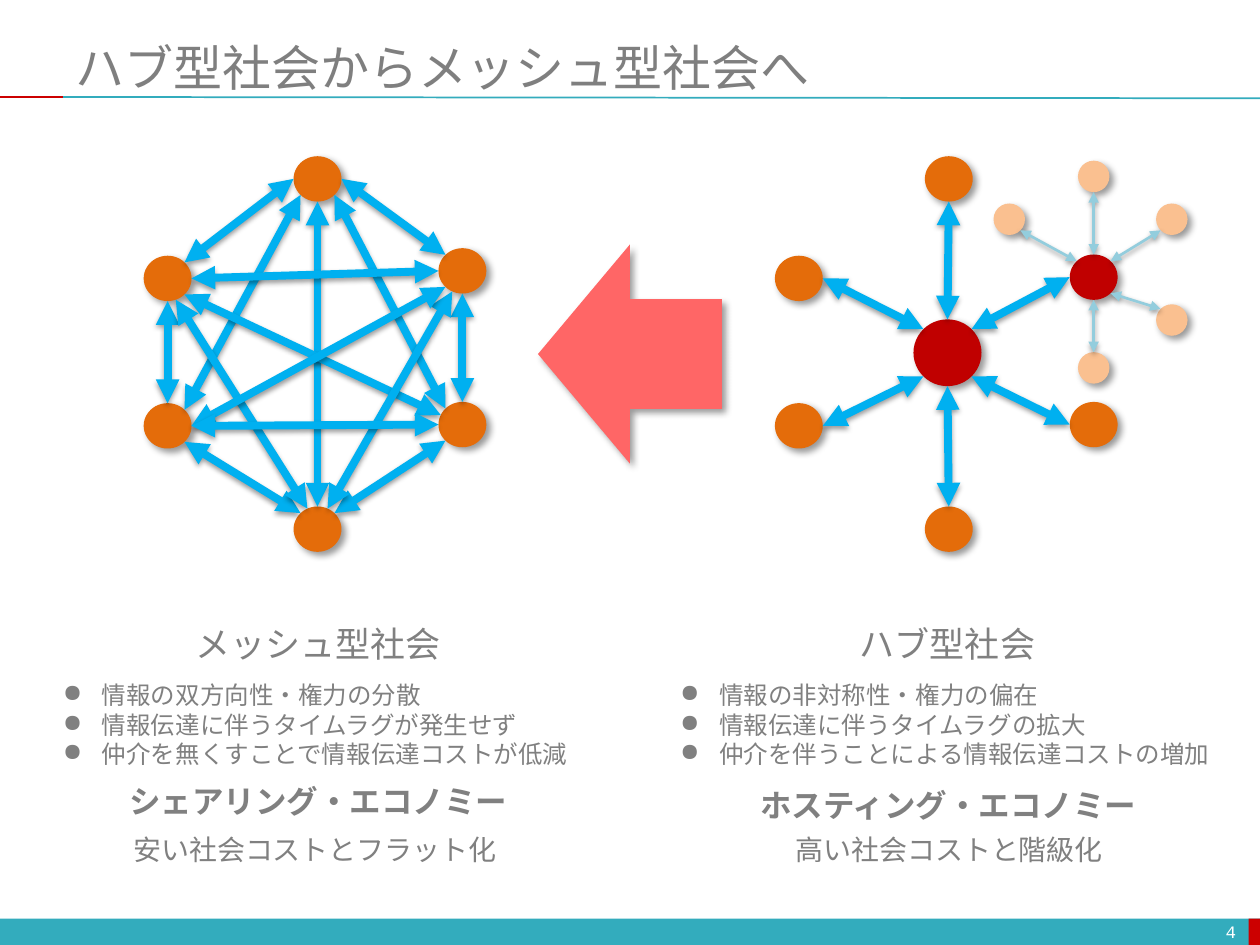
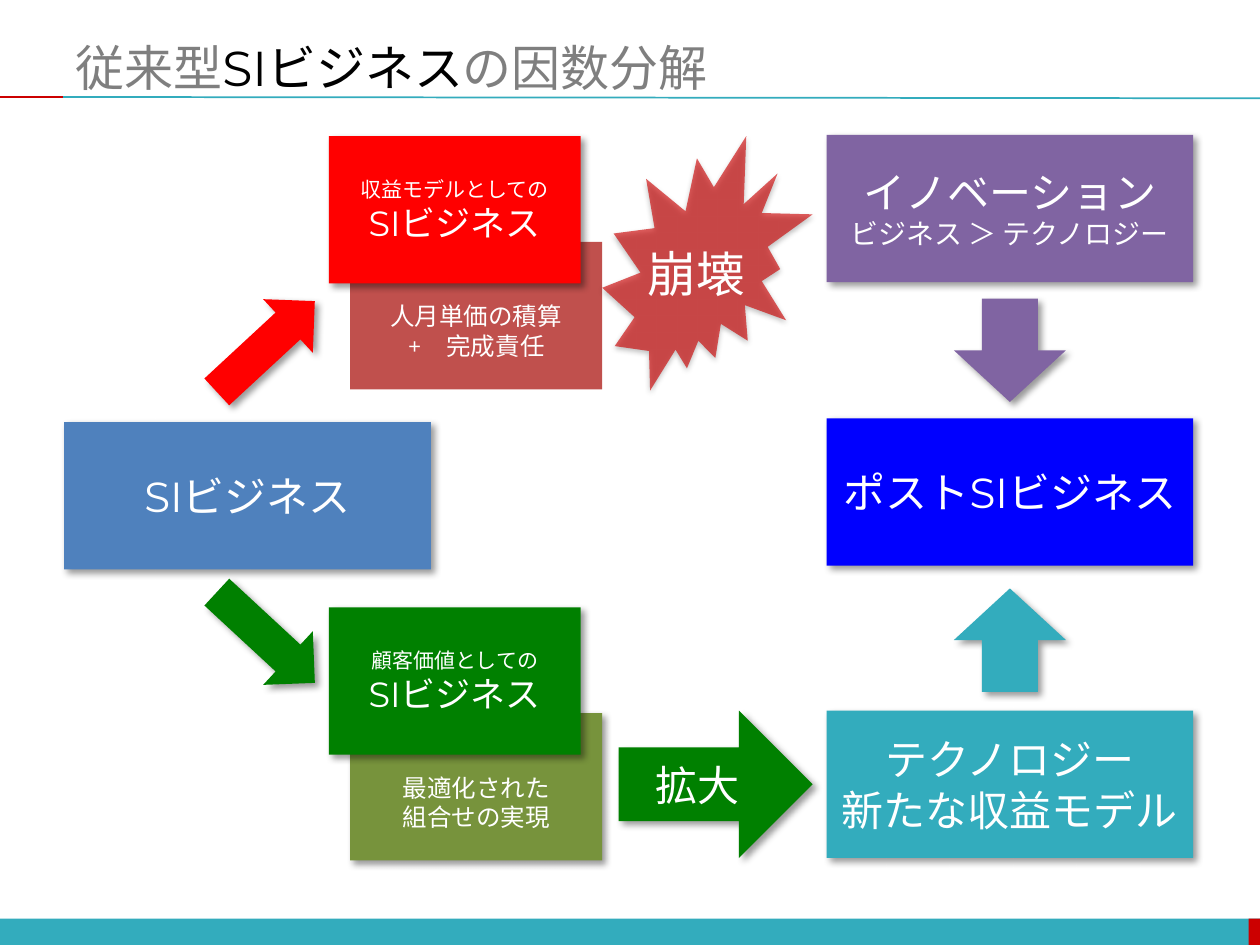
import math

import pptx
import pptx.util
import pptx.dml.color
import pptx.enum.shapes
import pptx.enum.text
import pptx.oxml
import pptx.oxml.ns
from lxml import etree

Inches = pptx.util.Inches
Pt = pptx.util.Pt
RGBColor = pptx.dml.color.RGBColor
Kind = pptx.enum.shapes.MSO_SHAPE
Align = pptx.enum.text.PP_ALIGN
Anchor = pptx.enum.text.MSO_ANCHOR
qn = pptx.oxml.ns.qn

TEAL = RGBColor(0x33, 0xAC, 0xBD)
CRIMSON = RGBColor(0xCC, 0x00, 0x00)
WHITE = RGBColor(0xFF, 0xFF, 0xFF)
BLACK = RGBColor(0x00, 0x00, 0x00)
GRAY = RGBColor(0x7F, 0x7F, 0x7F)
SILVER = RGBColor(0x80, 0x80, 0x80)
ORANGE = RGBColor(0xE4, 0x6C, 0x0A)
PEACH = RGBColor(0xFA, 0xC0, 0x90)
MAROON = RGBColor(0xC0, 0x00, 0x00)
SKY = RGBColor(0x00, 0xB0, 0xF0)
PALE = RGBColor(0x93, 0xCD, 0xDD)
CORAL = RGBColor(0xFF, 0x66, 0x66)
OLIVE = RGBColor(0x77, 0x93, 0x3C)
BRICK = RGBColor(0xC0, 0x50, 0x4D)
STEEL = RGBColor(0x4F, 0x81, 0xBD)
RED = RGBColor(0xFF, 0x00, 0x00)
GREEN = RGBColor(0x00, 0x80, 0x00)
PURPLE = RGBColor(0x80, 0x64, 0xA2)
BLUE = RGBColor(0x00, 0x00, 0xFF)

CJK = "Noto Sans CJK JP"
LATIN = "Montserrat"
BODY = "Calibri"
SOFT = (4, 3, 45, 40)
UNDER = (3.1, 1.6, 90, 38)


class Deck:
    def __init__(self):
        self.file = pptx.Presentation()
        self.file.slide_width = Inches(10)
        self.file.slide_height = Inches(7.5)
        self.slide = None

    def page(self, runs):
        self.slide = self.file.slides.add_slide(self.file.slide_layouts[5])
        self.shape(Kind.RECTANGLE, (0, 7.29, 10, 0.22), TEAL, None)
        self.shape(Kind.RECTANGLE, (9.91, 7.29, 0.1, 0.22), CRIMSON, None)
        self.line((Inches(0.5), Inches(0.77)), (Inches(10), Inches(0.78)), TEAL, 1)
        self.line((0, Inches(0.77)), (Inches(0.5), Inches(0.77)), CRIMSON, 1)
        title = self.slide.shapes.title
        self.place(title, (0.5, 0.3, 9.5, 0.46))
        frame = title.text_frame
        frame.auto_size = pptx.enum.text.MSO_AUTO_SIZE.NONE
        frame.vertical_anchor = Anchor.MIDDLE
        para = frame.paragraphs[0]
        para.alignment = Align.LEFT
        for text, font, color in runs:
            self.run(para, text, 28, font, color)

    def place(self, shape, box):
        shape.left, shape.top, shape.width, shape.height = map(Inches, box)

    def shade(self, shape, look):
        props = shape._element.spPr
        effects = etree.SubElement(props, qn("a:effectLst"))
        if look:
            blur, dist, angle, alpha = look
            outer = etree.SubElement(
                effects, qn("a:outerShdw"), blurRad=str(int(Pt(blur))),
                dist=str(int(Pt(dist))), dir=str(angle * 60000), rotWithShape="0")
            color = etree.SubElement(outer, qn("a:srgbClr"), val="000000")
            etree.SubElement(color, qn("a:alpha"), val=str(alpha * 1000))

    def shape(self, kind, box, fill, look=SOFT, turn=0, alpha=None):
        shape = self.slide.shapes.add_shape(kind, *map(Inches, box))
        shape.fill.solid()
        shape.fill.fore_color.rgb = fill
        shape.line.fill.background()
        shape.rotation = turn
        self.shade(shape, look)
        if alpha:
            color = shape._element.spPr.find(".//" + qn("a:srgbClr"))
            etree.SubElement(color, qn("a:alpha"), val=str(alpha * 1000))
        return shape

    def disc(self, mid, size, fill):
        (x, y), (wide, high) = mid, size
        box = (x - wide / 2, y - high / 2, wide, high)
        return self.shape(Kind.OVAL, box, fill)

    def line(self, start, end, color, width, look=None, heads=False):
        line = self.slide.shapes.add_connector(
            pptx.enum.shapes.MSO_CONNECTOR.STRAIGHT, *start, *end)
        line.line.color.rgb = color
        line.line.width = Pt(width)
        if heads:
            for tag in ("a:headEnd", "a:tailEnd"):
                etree.SubElement(line.line._get_or_add_ln(), qn(tag), type="triangle")
        self.shade(line, look)

    def port(self, disc, angle):
        turn = math.radians(angle)
        return (int(disc.left + disc.width / 2 * (1 + math.cos(turn))),
                int(disc.top + disc.height / 2 * (1 + math.sin(turn))))

    def link(self, first, out, last, into, color=SKY, width=4.5):
        self.line(self.port(first, out), self.port(last, into),
                  color, width, UNDER, True)

    def run(self, para, text, size, font, color, bold=False):
        run = para.add_run()
        run.text = text
        run.font.size = Pt(size)
        run.font.name = font
        run.font.bold = bold
        run.font.color.rgb = color
        etree.SubElement(run._r.get_or_add_rPr(), qn("a:ea"), typeface=CJK)

    def fill(self, frame, lines, font, color, align=Align.CENTER,
             bold=False, bullet=False):
        for i, (text, size) in enumerate(lines):
            para = frame.add_paragraph() if i else frame.paragraphs[0]
            para.alignment = align
            if bullet:
                props = para._p.get_or_add_pPr()
                props.set("marL", str(Inches(0.31)))
                props.set("indent", str(-Inches(0.31)))
                etree.SubElement(props, qn("a:buChar"), char="●")
            self.run(para, text, size, font, color, bold)

    def text(self, box, lines, font=CJK, color=SILVER, **style):
        frame = self.slide.shapes.add_textbox(*map(Inches, box)).text_frame
        frame.word_wrap = False
        self.fill(frame, lines, font, color, **style)
        return frame

    def card(self, box, fill, lines, look=SOFT, kind=Kind.RECTANGLE, drop=0.05):
        frame = self.shape(kind, box, fill, look).text_frame
        frame.word_wrap = True
        frame.vertical_anchor = Anchor.MIDDLE
        frame.margin_top = Inches(drop)
        self.fill(frame, lines, LATIN, WHITE)


def society(deck):
    deck.page([("ハブ型社会からメッシュ型社会へ", BODY, GRAY)])
    number = deck.text((7.58, 7.27, 2.33, 0.24), [("4", 10)],
                       "Courier New", WHITE, align=Align.RIGHT)
    number.vertical_anchor = Anchor.MIDDLE

    size = (0.38, 0.36)
    ring = [(2.52, 1.42), (1.33, 2.21), (1.33, 3.38),
            (2.52, 4.2), (3.67, 3.37), (3.67, 2.15)]
    mesh = [deck.disc(mid, size, ORANGE) for mid in ring]
    for a, out, b, into in [
            (1, 315, 0, 180), (1, 90, 2, 270), (5, 225, 0, 0),
            (4, 270, 5, 90), (4, 135, 3, 315), (2, 45, 3, 225),
            (4, 225, 0, 45), (3, 270, 0, 90), (2, 315, 0, 135),
            (1, 0, 5, 180), (1, 45, 4, 205), (1, 70, 3, 245),
            (3, 295, 5, 115), (2, 0, 5, 135), (2, 0, 4, 180)]:
        deck.link(mesh[a], out, mesh[b], into)

    rim = [deck.disc((x + 5.01, y), size, ORANGE) for x, y in ring[:5]]
    minor = deck.disc((8.68, 2.2), size, MAROON)
    hub = deck.disc((7.52, 2.8), (0.54, 0.53), MAROON)
    spokes = zip(rim + [minor], (270, 225, 135, 90, 45, 315),
                 (90, 0, 0, 270, 180, 180))
    for node, out, into in spokes:
        deck.link(hub, out, node, into)
    for mid, out in [((8.68, 1.4), 270), ((9.3, 1.74), 315), ((8.68, 2.92), 90),
                     ((9.3, 2.54), 45), ((8.01, 1.74), 225)]:
        leaf = deck.disc(mid, (0.25, 0.25), PEACH)
        deck.link(minor, out, leaf, out + 180, PALE, 1.5)

    deck.shape(Kind.LEFT_ARROW, (4.27, 1.94, 1.46, 1.74), CORAL)
    deck.text((1.44, 4.89, 2.17, 0.44), [("メッシュ型社会", 20)])
    deck.text((6.72, 4.89, 1.6, 0.44), [("ハブ型社会", 20)])
    for box, lines in [
            ((0.4, 5.35, 4.25, 0.81),
             ["情報の双方向性・権力の分散", "情報伝達に伴うタイムラグが発生せず",
              "仲介を無くすことで情報伝達コストが低減"]),
            ((5.3, 5.35, 4.44, 0.81),
             ["情報の非対称性・権力の偏在", "情報伝達に伴うタイムラグの拡大",
              "仲介を伴うことによる情報伝達コストの増加"])]:
        deck.text(box, [(line, 14) for line in lines],
                  align=Align.LEFT, bullet=True)
    deck.text((0.91, 6.16, 3.23, 0.4), [("シェアリング・エコノミー", 18)], bold=True)
    deck.text((5.91, 6.19, 3.23, 0.4), [("ホスティング・エコノミー", 18)], bold=True)
    deck.text((0.94, 6.56, 3.12, 0.37), [("安い社会コストとフラット化", 16)])
    deck.text((6.2, 6.56, 2.67, 0.37), [("高い社会コストと階級化", 16)])


def business(deck):
    deck.page([("従来型", LATIN, GRAY), ("SI", LATIN, BLACK),
               ("ビジネス", CJK, BLACK), ("の因数分解", BODY, GRAY)])
    small, wide, high = 2, 2.91, 1.17
    for top, back, front, look, head, notes in [
            (4.82, OLIVE, GREEN, SOFT, "顧客価値としての",
             ["最適化された", "組合せの実現"]),
            (1.08, BRICK, RED, None, "収益モデルとしての",
             ["人月単価の積算", "+　完成責任"])]:
        deck.card((2.78, top + 0.84, small, high), back,
                  [(note, 14) for note in notes], look, drop=0.29)
        deck.card((2.61, top, small, high), front,
                  [(head, 12), ("SIビジネス", 20)])
    deck.card((0.51, 3.35, wide, high), STEEL, [("SIビジネス", 24)])
    deck.shape(Kind.RIGHT_ARROW, (1.58, 2.46, 1.06, 0.58), RED, turn=317.2)
    deck.shape(Kind.RIGHT_ARROW, (1.58, 4.77, 1.06, 0.58), GREEN, turn=42.8)
    for top, color, lines in [
            (1.07, PURPLE, [("イノベーション", 24),
                            ("ビジネス ＞ テクノロジー", 16)]),
            (3.32, BLUE, [("ポストSIビジネス", 24)]),
            (5.64, TEAL, [("テクノロジー", 24), ("新たな収益モデル", 24)])]:
        deck.card((6.56, top, wide, high), color, lines)
    deck.shape(Kind.DOWN_ARROW, (7.57, 2.37, 0.89, 0.82), PURPLE)
    deck.shape(Kind.UP_ARROW, (7.57, 4.67, 0.89, 0.82), TEAL)
    deck.shape(Kind.EXPLOSION2, (4.78, 1.08, 1.67, 2.02), CRIMSON, UNDER, alpha=63)
    deck.text((5.03, 1.88, 0.99, 0.57), [("崩壊", 28)], BODY, WHITE)
    deck.card((4.91, 5.64, 1.54, high), GREEN, [("拡大", 24)],
              kind=Kind.RIGHT_ARROW)


def main():
    deck = Deck()
    society(deck)
    business(deck)
    deck.file.save("out.pptx")


if __name__ == "__main__":
    main()
